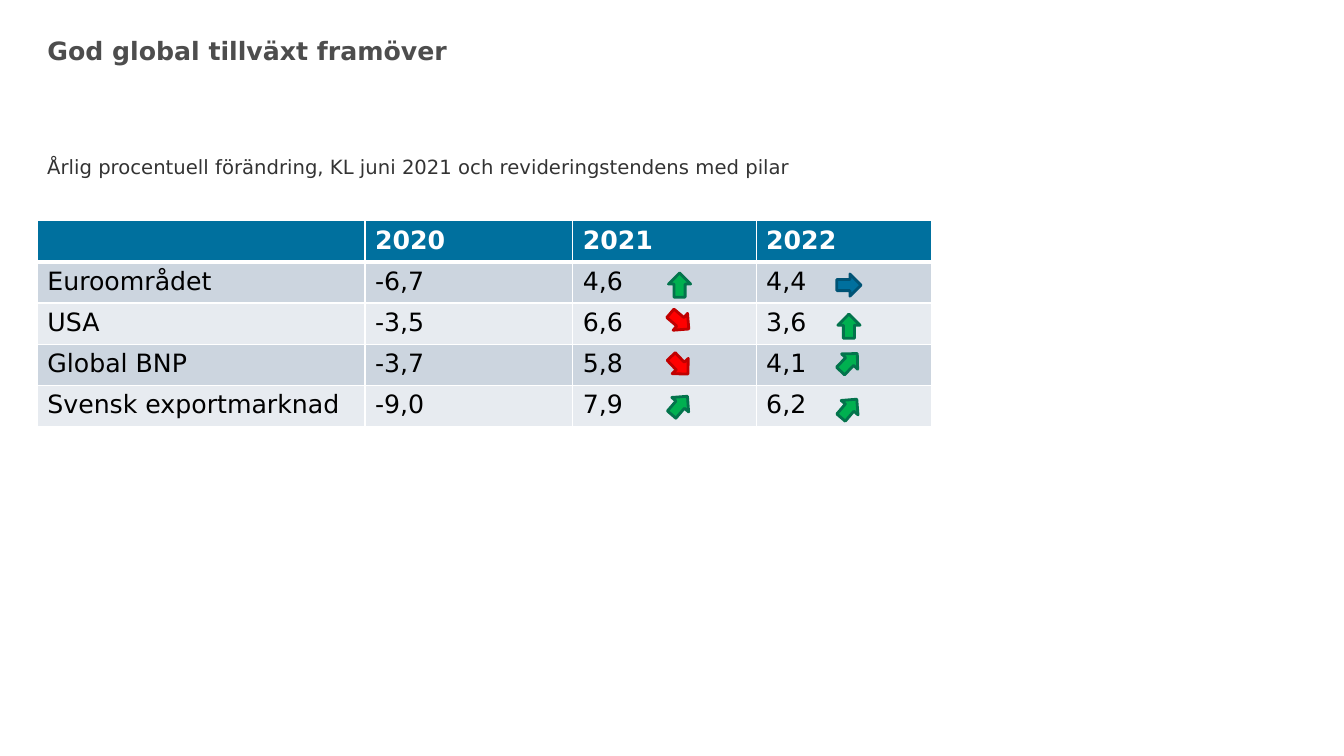
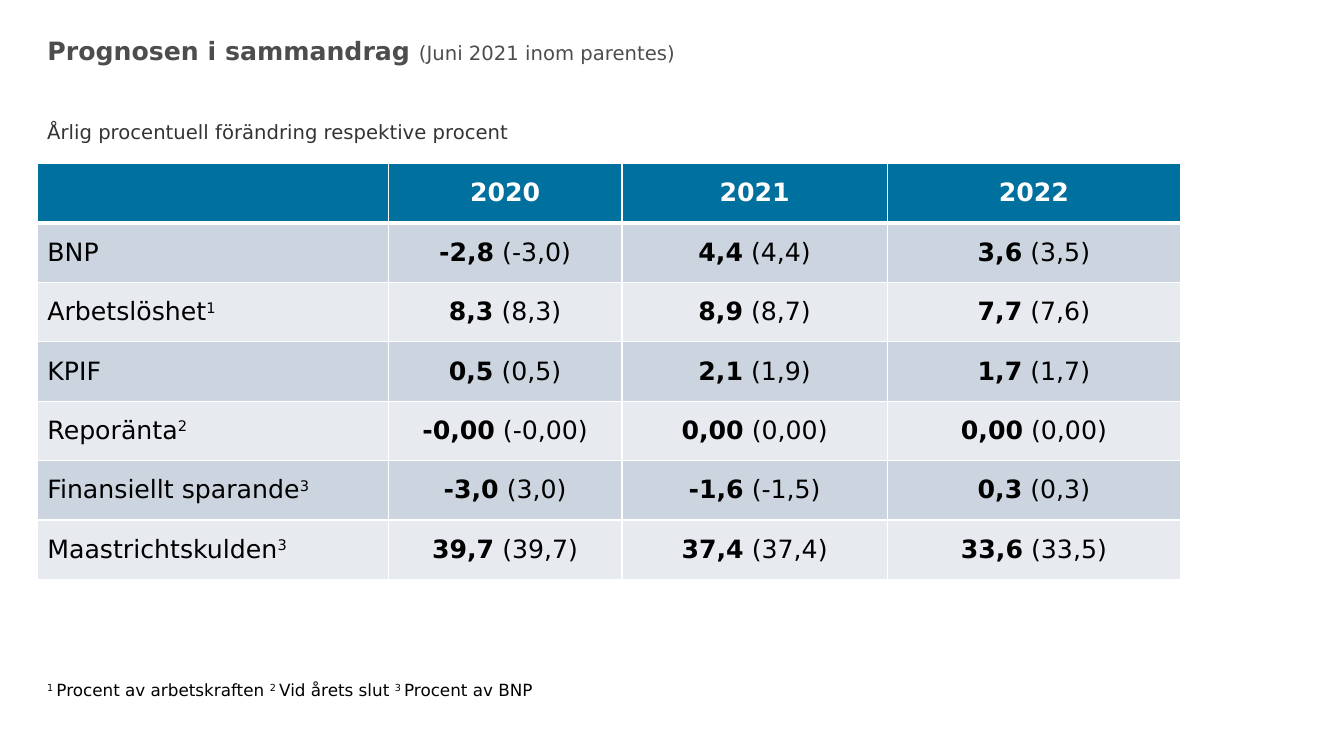
from dataclasses import dataclass
from itertools import accumulate

from lxml import etree
from pptx import Presentation
from pptx import util as u
from pptx.dml.color import RGBColor
from pptx.enum import shapes, text
from pptx.oxml import ns


@dataclass(frozen=True)
class Theme:
    """Colours, font and type sizes of the deck."""
    font: str = "DejaVu Sans"
    title: str = "4D4D4D"
    subtitle: str = "333333"
    body: str = "000000"
    white: str = "FFFFFF"
    header: str = "00709E"
    bands: tuple = ("CCD5DF", "E7EBF0")
    large: int = 18
    medium: int = 14
    small: int = 12
    rule: int = 1
    header_rule: int = 3
    arrow_line: int = 2


@dataclass(frozen=True)
class Box:
    """A region in inches."""
    x: float
    y: float
    w: float
    h: float

    def emu(self):
        """Return left, top, width and height as lengths."""
        return [u.Inches(n) for n in (self.x, self.y, self.w, self.h)]


@dataclass(frozen=True)
class Trend:
    """An arrow's angle, its drop below the cell top and its colours."""
    angle: float
    drop: float
    fill: str = "00B050"
    line: str = "03734C"


THEME = Theme()
MARGIN, TEXT_W, LINE_H = 0.37, 9.47, 0.55
TITLE = Box(MARGIN, 0.3, TEXT_W, LINE_H)
YEARS = ["", "2020", "2021", "2022"]
BOLD, SUPER = {"bold": True}, {"raised": True}
RED = ("FF0000", "C00000")
BLUE = ("00709E", "005375")

GROWTH = [
    ("Euroområdet", "-6,7", "4,6", "4,4"),
    ("USA", "-3,5", "6,6", "3,6"),
    ("Global BNP", "-3,7", "5,8", "4,1"),
    ("Svensk exportmarknad", "-9,0", "7,9", "6,2"),
]
TRENDS_2021 = [Trend(270, 0.12), Trend(40.4, 0.07, *RED),
               Trend(46.5, 0.1, *RED), Trend(310.7, 0.09)]
TRENDS_2022 = [Trend(0, 0.12, *BLUE), Trend(270, 0.12),
               Trend(313.7, 0.07), Trend(310.5, 0.12)]

FORECAST = [
    ("BNP", "", ("-2,8", "-3,0"), ("4,4", "4,4"), ("3,6", "3,5")),
    ("Arbetslöshet", "1", ("8,3", "8,3"), ("8,9", "8,7"), ("7,7", "7,6")),
    ("KPIF", "", ("0,5", "0,5"), ("2,1", "1,9"), ("1,7", "1,7")),
    ("Reporänta", "2", ("-0,00", "-0,00"), ("0,00", "0,00"), ("0,00", "0,00")),
    ("Finansiellt sparande", "3", ("-3,0", "3,0"), ("-1,6", "-1,5"), ("0,3", "0,3")),
    ("Maastrichtskulden", "3", ("39,7", "39,7"), ("37,4", "37,4"), ("33,6", "33,5")),
]
FOOTNOTES = [("1 ", "Procent av arbetskraften "), ("2 ", "Vid årets slut "),
             ("3 ", "Procent av BNP")]


def write(paragraph, pieces, color, size):
    """Write (text, style) pieces as runs of one paragraph."""
    for words, style in pieces:
        run = paragraph.add_run()
        run.text = words
        font = run.font
        font.name = THEME.font
        font.size = u.Pt(style.get("size", size))
        font.bold = style.get("bold", False)
        font.color.rgb = RGBColor.from_string(color)
        if style.get("raised"):
            run._r.get_or_add_rPr().set("baseline", "30000")


def add_title(slide, pieces):
    """Move the title placeholder to its band and fill it."""
    title = slide.shapes.title
    title.left, title.top, title.width, title.height = TITLE.emu()
    frame = title.text_frame
    frame.auto_size = text.MSO_AUTO_SIZE.NONE
    frame.vertical_anchor = text.MSO_ANCHOR.TOP
    frame.paragraphs[0].alignment = text.PP_ALIGN.LEFT
    write(frame.paragraphs[0], pieces, THEME.title, THEME.large)


def add_line(slide, box, pieces, color, size, anchor):
    """Place a line of text in the given box."""
    frame = slide.shapes.add_textbox(*box.emu()).text_frame
    frame.word_wrap = True
    frame.vertical_anchor = anchor
    write(frame.paragraphs[0], pieces, color, size)


def add_subtitle(slide, top, words):
    """Place the unit line above a table."""
    add_line(slide, Box(MARGIN, top, TEXT_W, LINE_H), [(words, {})],
             THEME.subtitle, THEME.medium, text.MSO_ANCHOR.BOTTOM)


def add_borders(cell, top, bottom):
    """Draw white rules around a cell."""
    sides = {"lnL": THEME.rule, "lnR": THEME.rule, "lnT": top, "lnB": bottom}
    for side, width in sides.items():
        line = etree.SubElement(cell._tc.get_or_add_tcPr(), ns.qn(f"a:{side}"),
                                w=str(u.Pt(width)))
        fill = etree.SubElement(line, ns.qn("a:solidFill"))
        etree.SubElement(fill, ns.qn("a:srgbClr"), val=THEME.white)


def add_year_table(slide, box, columns, rows, anchor, value_align):
    """Place a banded table whose rows hold lists of text pieces."""
    rows = [[[(year, BOLD)] if year else [] for year in YEARS], *rows]
    table = slide.shapes.add_table(len(rows), len(columns), *box.emu()).table
    for column, width in zip(table.columns, columns):
        column.width = u.Inches(width)
    for r, row in enumerate(rows):
        table.rows[r].height = u.Inches(box.h / len(rows))
        fill = THEME.bands[(r - 1) % 2] if r else THEME.header
        color = THEME.body if r else THEME.white
        top = THEME.header_rule if r == 1 else THEME.rule
        bottom = THEME.rule if r else THEME.header_rule
        for c, pieces in enumerate(row):
            cell = table.cell(r, c)
            add_borders(cell, top, bottom)
            cell.fill.solid()
            cell.fill.fore_color.rgb = RGBColor.from_string(fill)
            cell.vertical_anchor = anchor
            paragraph = cell.text_frame.paragraphs[0]
            paragraph.alignment = value_align if c else text.PP_ALIGN.LEFT
            write(paragraph, pieces, color, THEME.large)


def add_trend_arrow(slide, left, top, trend):
    """Place one revision arrow relative to the top of its cell."""
    box = Box(left, top + trend.drop, 0.24, 0.22)
    arrow = slide.shapes.add_shape(shapes.MSO_SHAPE.RIGHT_ARROW, *box.emu())
    arrow.rotation = trend.angle
    arrow.shadow.inherit = False
    arrow.fill.solid()
    arrow.fill.fore_color.rgb = RGBColor.from_string(trend.fill)
    arrow.line.color.rgb = RGBColor.from_string(trend.line)
    arrow.line.width = u.Pt(THEME.arrow_line)


def build_growth(slide):
    """Build the slide on global growth with revision arrows."""
    box, columns = Box(MARGIN, 2.19, 8.87, 2.04), [3.25, 2.06, 1.82, 1.74]
    add_title(slide, [("God global tillväxt framöver", BOLD)])
    add_subtitle(slide, 1.27, "Årlig procentuell förändring, KL juni 2021 "
                 "och revideringstendens med pilar")
    rows = [[[(value, {})] for value in row] for row in GROWTH]
    add_year_table(slide, box, columns, rows, text.MSO_ANCHOR.TOP,
                   text.PP_ALIGN.LEFT)
    lefts = list(accumulate(columns, initial=box.x))
    row_h = box.h / (len(GROWTH) + 1)
    for left, trends in ((lefts[2] + 0.94, TRENDS_2021),
                         (lefts[3] + 0.8, TRENDS_2022)):
        for r, trend in enumerate(trends, start=1):
            add_trend_arrow(slide, left, box.y + r * row_h, trend)


def build_forecast(slide):
    """Build the slide with the forecast summary and its footnotes."""
    add_title(slide, [("Prognosen i sammandrag ", BOLD),
                      ("(Juni 2021 inom parentes)", {"size": THEME.medium})])
    add_subtitle(slide, 0.92, "Årlig procentuell förändring respektive procent")
    rows = []
    for label, note, *values in FORECAST:
        heading = [(label, {})] + ([(note, SUPER)] if note else [])
        rows.append([heading] + [[(new, BOLD), (f" ({old})", {})]
                                 for new, old in values])
    add_year_table(slide, Box(MARGIN, 1.62, 11.34, 4.13),
                   [3.48, 2.32, 2.63, 2.91], rows,
                   text.MSO_ANCHOR.MIDDLE, text.PP_ALIGN.CENTER)
    notes = [piece for mark, words in FOOTNOTES
             for piece in ((mark, SUPER), (words, {}))]
    add_line(slide, Box(MARGIN, 6.69, TEXT_W, 0.68), notes, THEME.body,
             THEME.small, text.MSO_ANCHOR.TOP)


def main():
    """Build and save the deck."""
    deck = Presentation()
    deck.slide_width, deck.slide_height = u.Inches(13.33), u.Inches(7.5)
    title_only = deck.slide_layouts[5]
    for build in (build_growth, build_forecast):
        build(deck.slides.add_slide(title_only))
    deck.save("out.pptx")


if __name__ == "__main__":
    main()
